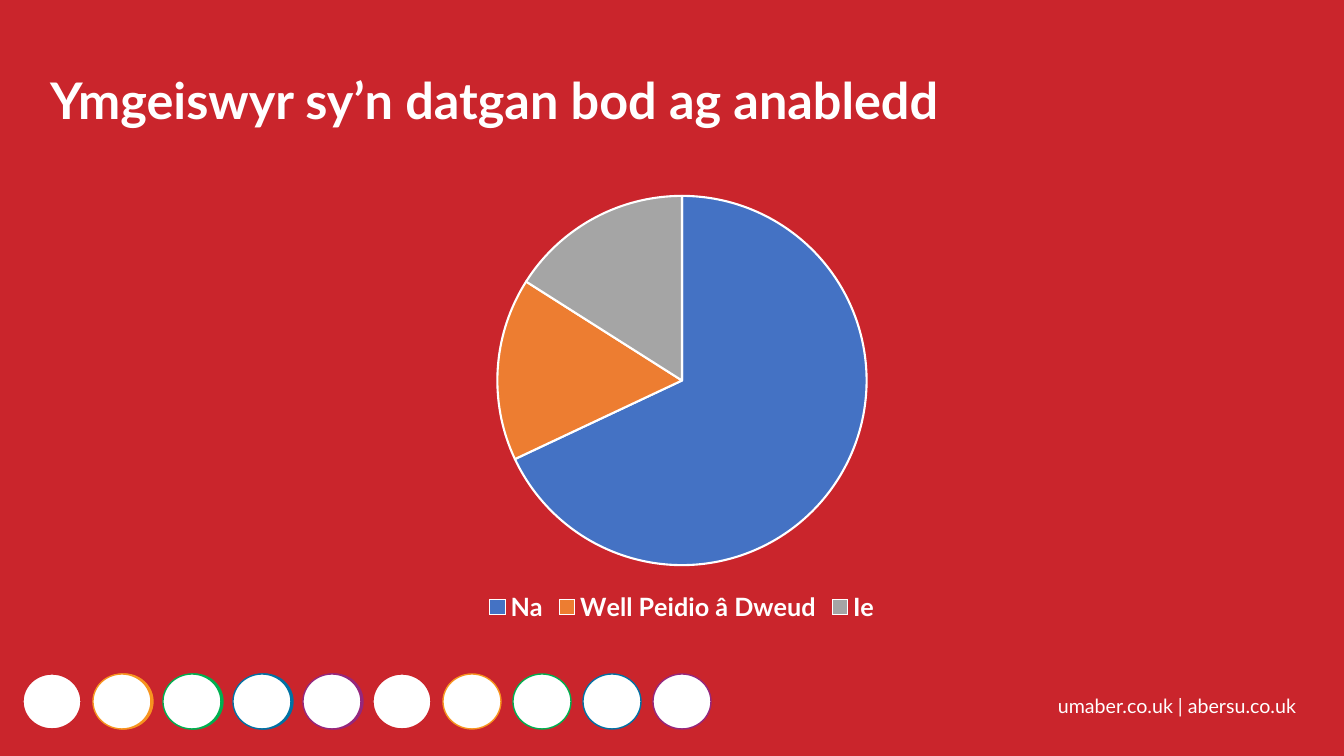
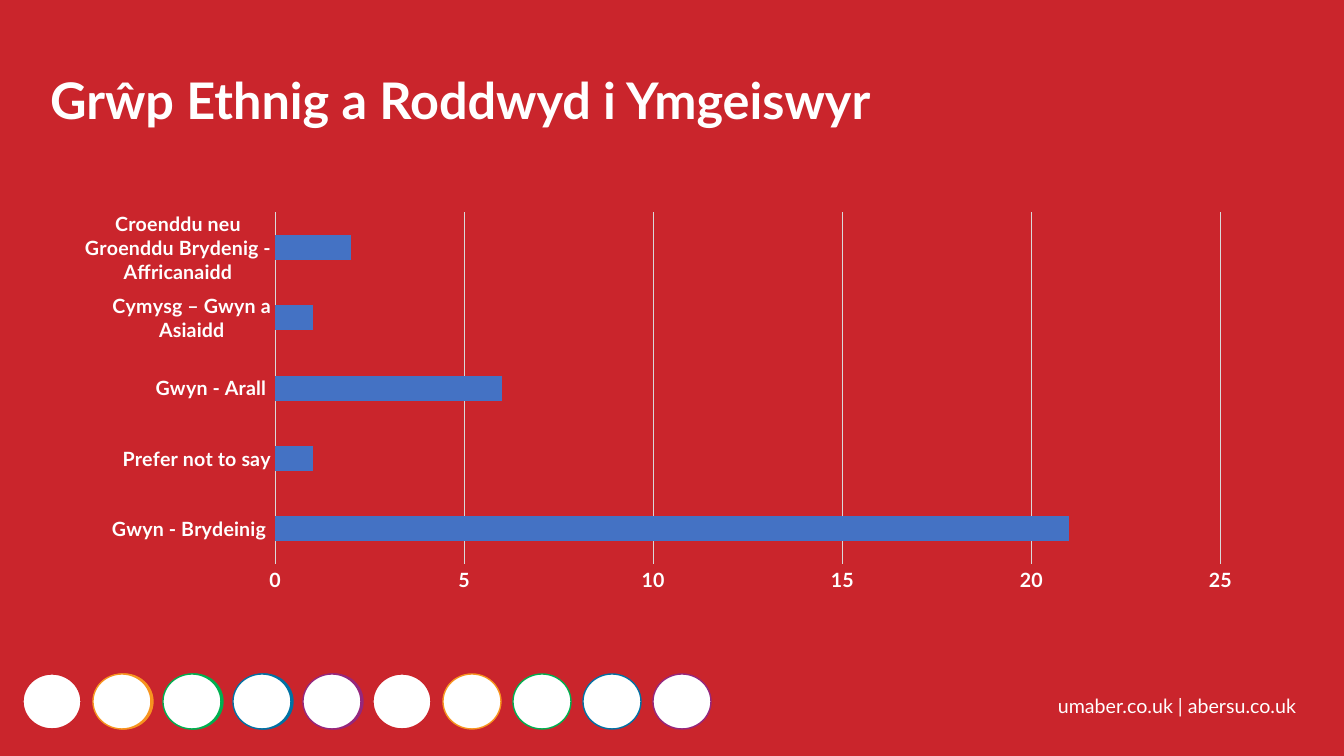
from dataclasses import dataclass

from pptx import Presentation
from pptx.chart.chart import Chart
from pptx.chart.data import CategoryChartData
from pptx.dml.color import RGBColor
from pptx.enum.chart import XL_CHART_TYPE, XL_LEGEND_POSITION, XL_TICK_MARK
from pptx.enum.shapes import MSO_SHAPE
from pptx.enum.text import MSO_ANCHOR, MSO_AUTO_SIZE, PP_ALIGN
from pptx.slide import Slide
from pptx.text.text import Font, TextFrame
from pptx.util import Emu, Pt

PIE, BAR = XL_CHART_TYPE.PIE, XL_CHART_TYPE.BAR_CLUSTERED
LEGEND_BOTTOM = XL_LEGEND_POSITION.BOTTOM
NO_TICK = XL_TICK_MARK.NONE
ELLIPSE = MSO_SHAPE.OVAL
TOP, LEFT = MSO_ANCHOR.TOP, PP_ALIGN.LEFT
NO_FIT = MSO_AUTO_SIZE.NONE

# Shared look
SLIDE_W, SLIDE_H = 1344, 756
EMU_PER_PX = 12192000 / SLIDE_W
FONT = "Lato"
RED, WHITE, GRID = "CA252C", "FFFFFF", "D9D9D9"
BLUE, ORANGE, GREY = "4472C4", "ED7D31", "A5A5A5"
RING_COLOURS = (RED, "F7941F", "00AF50", "0171A3", "95277D")
RING_PITCH = 70
FOOTER = "umaber.co.uk | abersu.co.uk"


@dataclass(frozen=True)
class Box:
    left: int
    top: int
    width: int
    height: int

    def emu(self) -> tuple[Emu, Emu, Emu, Emu]:
        return (px(self.left), px(self.top), px(self.width), px(self.height))


@dataclass(frozen=True)
class Survey:
    title: str
    kind: XL_CHART_TYPE
    box: Box
    text_size: int
    answers: dict[str, int]


TITLE_BOX = Box(40, 71, 1151, 88)
FOOTER_BOX = Box(1048, 689, 282, 34)

SURVEYS = (
    Survey(
        "Ymgeiswyr sy’n datgan bod ag anabledd", PIE,
        Box(120, 182, 1124, 445), 18,
        {"Na": 68, "Well Peidio â Dweud": 16, "Ie": 16},
    ),
    Survey(
        "Grŵp Ethnig a Roddwyd i Ymgeiswyr", BAR,
        Box(61, 203, 1195, 397), 14,
        {
            "Gwyn - Brydeinig ": 21,
            "Prefer not to say": 1,
            "Gwyn - Arall ": 6,
            "Cymysg – Gwyn a Asiaidd": 1,
            "Croenddu neu Groenddu Brydenig - Affricanaidd": 2,
        },
    ),
)


def px(length: int) -> Emu:
    return Emu(round(length * EMU_PER_PX))


def colour(value: str) -> RGBColor:
    return RGBColor.from_string(value)


def style_font(font: Font, size: int, bold: bool) -> None:
    font.name = FONT
    font.size = Pt(size)
    font.bold = bold
    font.color.rgb = colour(WHITE)


def write(frame: TextFrame, text: str, size: int, bold: bool, spacing: float) -> None:
    frame.word_wrap = True
    frame.auto_size = NO_FIT
    frame.vertical_anchor = TOP
    paragraph = frame.paragraphs[0]
    paragraph.alignment = LEFT
    paragraph.line_spacing = spacing
    run = paragraph.add_run()
    run.text = text
    style_font(run.font, size, bold)


def add_circle(slide: Slide, box: Box, fill: str, outline: str) -> None:
    circle = slide.shapes.add_shape(ELLIPSE, *box.emu())
    circle.shadow.inherit = False
    circle.fill.solid()
    circle.fill.fore_color.rgb = colour(fill)
    circle.line.color.rgb = colour(outline)
    circle.line.width = Pt(1)


def add_circle_row(slide: Slide, left: int, outlines: tuple[str, ...], fill: str = "") -> None:
    """Draw evenly spaced circles; without a fill each takes its outline colour."""
    for index, outline in enumerate(outlines):
        box = Box(left + index * RING_PITCH, 674, 58, 55)
        add_circle(slide, box, fill or outline, outline)


def add_frame(slide: Slide, title: str) -> None:
    # Coloured discs peek out behind the first five white ones
    add_circle_row(slide, 25, RING_COLOURS)
    add_circle_row(slide, 23, RING_COLOURS * 2, WHITE)

    footer = slide.shapes.add_textbox(*FOOTER_BOX.emu())
    write(footer.text_frame, FOOTER, 14, False, 1.0)

    heading = slide.shapes.title
    heading.left, heading.top, heading.width, heading.height = TITLE_BOX.emu()
    write(heading.text_frame, title, 36, True, 0.9)


def style_pie(chart: Chart, size: int) -> None:
    chart.plots[0].vary_by_categories = True
    for index, fill in enumerate((BLUE, ORANGE, GREY)):
        wedge = chart.plots[0].series[0].points[index].format
        wedge.fill.solid()
        wedge.fill.fore_color.rgb = colour(fill)
        wedge.line.color.rgb = colour(WHITE)
        wedge.line.width = Pt(1.5)
    chart.has_legend = True
    chart.legend.position = LEGEND_BOTTOM
    chart.legend.include_in_layout = False
    style_font(chart.legend.font, size, True)


def style_bars(chart: Chart, size: int) -> None:
    chart.has_legend = False
    plot = chart.plots[0]
    plot.vary_by_categories = False
    plot.gap_width = 182
    bars = plot.series[0].format
    bars.fill.solid()
    bars.fill.fore_color.rgb = colour(BLUE)

    groups, counts = chart.category_axis, chart.value_axis
    for axis in (groups, counts):
        axis.major_tick_mark = axis.minor_tick_mark = NO_TICK
        style_font(axis.tick_labels.font, size, True)
    groups.has_major_gridlines = False
    counts.has_major_gridlines = True
    counts.minimum_scale, counts.maximum_scale, counts.major_unit = 0, 25, 5
    counts.format.line.fill.background()
    for line in (groups.format.line, counts.major_gridlines.format.line):
        line.color.rgb = colour(GRID)
        line.width = Pt(0.75)


def add_survey_chart(slide: Slide, survey: Survey) -> None:
    data = CategoryChartData()
    data.categories = list(survey.answers)
    data.add_series("Series 1", list(survey.answers.values()))
    chart = slide.shapes.add_chart(survey.kind, *survey.box.emu(), data).chart
    chart.has_title = False
    style_font(chart.font, survey.text_size, True)
    style = style_pie if survey.kind == PIE else style_bars
    style(chart, survey.text_size)


def main() -> None:
    deck = Presentation()
    deck.slide_width, deck.slide_height = px(SLIDE_W), px(SLIDE_H)
    backdrop = deck.slide_master.background.fill
    backdrop.solid()
    backdrop.fore_color.rgb = colour(RED)

    title_only = deck.slide_layouts.get_by_name("Title Only")
    for survey in SURVEYS:
        slide = deck.slides.add_slide(title_only)
        add_frame(slide, survey.title)
        add_survey_chart(slide, survey)
    deck.save("out.pptx")


if __name__ == "__main__":
    main()
